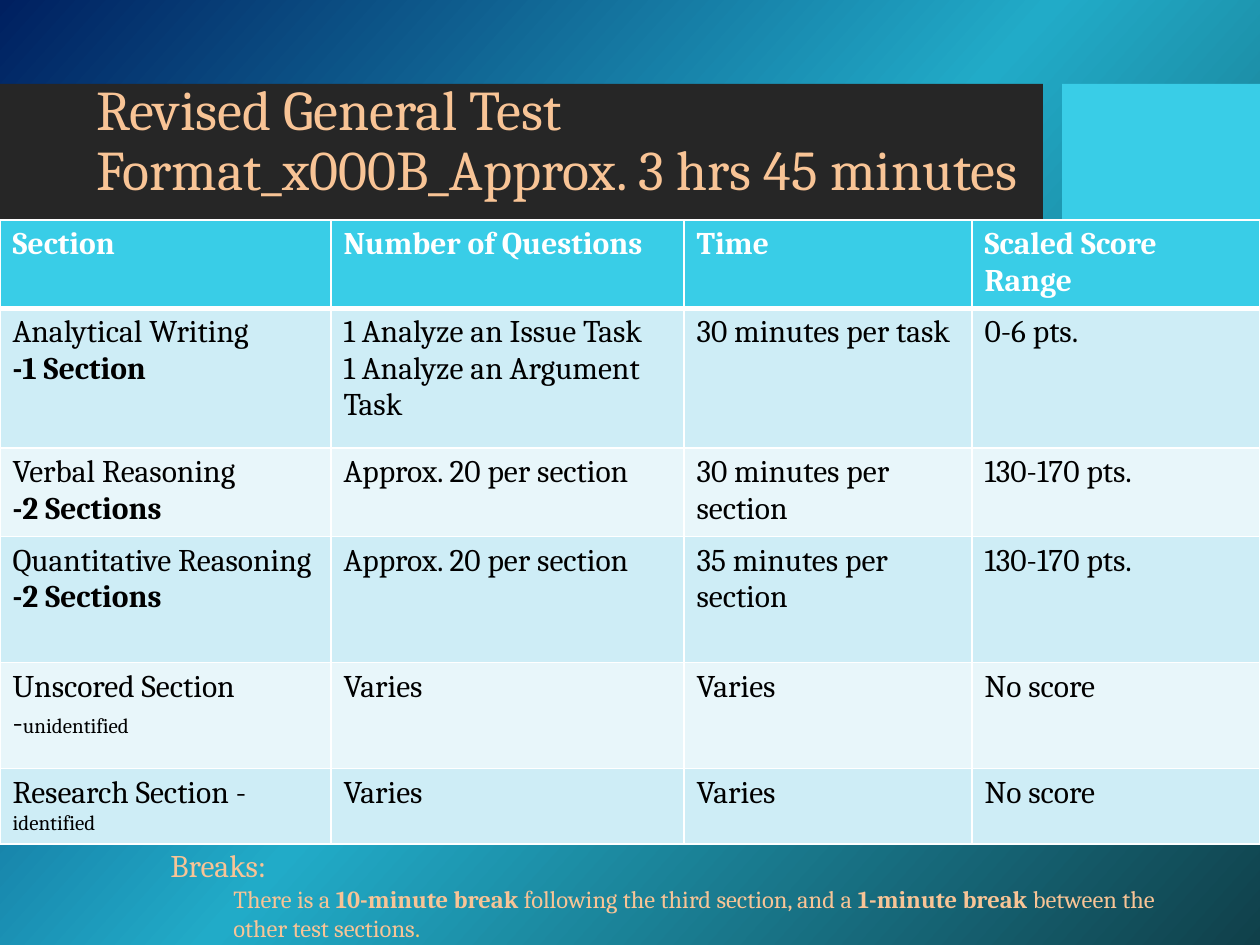
from copy import deepcopy

from lxml import etree
from pptx import Presentation
from pptx.dml.color import RGBColor
from pptx.enum import shapes, text
from pptx.oxml.ns import qn
from pptx.util import Emu, Pt

FONT = "Cambria"
PEACH, CYAN, WHITE, BLACK = "F8C496", "39CDE7", "FFFFFF", "000000"
BAND_FILLS = ["CEEDF6", "E8F6FA"]
GRADIENT = [(0, "002060"), (0.5, "21ABC8"), (1, "10404A")]
BANNER = [(0, 84, 1043, 189, "262626"), (1062, 84, 198, 189, CYAN)]
TITLE = "Revised General Test Format\vApprox. 3 hrs 45 minutes"

COLUMNS = [331, 353, 288, 288]
ROWS = [88, 140, 88, 126, 106, 75]
REGULAR, BOLD, SMALL = (18, False), (18, True), (12, False)
HEADER = ["Section", "Number of Questions", "Time", "Scaled Score Range"]
BODY = [
    [[[("Analytical Writing", REGULAR)], [("-1 Section", BOLD)]],
     "1 Analyze an Issue Task\n1 Analyze an Argument Task",
     "30 minutes per task", "0-6 pts."],
    [[[("Verbal Reasoning", REGULAR)], [("-2 Sections", BOLD)]],
     "Approx. 20 per section", "30 minutes per section", "130-170 pts."],
    [[[("Quantitative Reasoning", REGULAR)], [("-2 Sections", BOLD)]],
     "Approx. 20 per section", "35 minutes per section", "130-170 pts."],
    [[[("Unscored Section -", REGULAR), ("unidentified", SMALL)]],
     "Varies", "Varies", "No score"],
    [[[("Research Section - ", REGULAR), ("identified", SMALL)]],
     "Varies", "Varies", "No score"],
]
BREAKS = [
    [("Breaks:", REGULAR)],
    [("There is a ", (14, False)), ("10-minute break", (14, True)),
     (" following the third section, and a ", (14, False)),
     ("1-minute break", (14, True)),
     (" between the other test sections", (14, False)),
     (".", (14, False), "FFCC66")],
]


def px(value):
    return Emu(round(value * 914400 / 126))


def color(value):
    return RGBColor.from_string(value)


def write(frame, paragraphs, ink):
    for index, spans in enumerate(paragraphs):
        para = frame.add_paragraph() if index else frame.paragraphs[0]
        para.font.name = FONT
        for words, (size, bold), *special in spans:
            span = para.add_run()
            span.text = words
            span.font.name = FONT
            span.font.size = Pt(size)
            span.font.bold = bold
            span.font.color.rgb = color(special[0] if special else ink)


def add_text(page, left, top, width, height, paragraphs, ink):
    box = page.shapes.add_textbox(px(left), px(top), px(width), px(height))
    box.text_frame.word_wrap = True
    write(box.text_frame, paragraphs, ink)
    return box.text_frame


def add_borders(cell, bottom):
    properties = cell._tc.get_or_add_tcPr()
    for side, width in zip("LRTB", (1, 1, 1, bottom)):
        line = etree.SubElement(properties, qn(f"a:ln{side}"), w=str(Pt(width)))
        fill = etree.SubElement(line, qn("a:solidFill"))
        etree.SubElement(fill, qn("a:srgbClr"), val=WHITE)


def fill_cell(cell, content, fill, ink, style, bottom):
    if isinstance(content, str):
        content = [[(words, style)] for words in content.split("\n")]
    write(cell.text_frame, content, ink)
    add_borders(cell, bottom)
    cell.fill.solid()
    cell.fill.fore_color.rgb = color(fill)


def paint_background(page):
    fill = page.background.fill
    fill.gradient()
    fill.gradient_angle = 318
    stops = page._element.find(".//" + qn("a:gsLst"))
    stops.append(deepcopy(stops[-1]))
    for stop, (position, value) in zip(fill.gradient_stops, GRADIENT):
        stop.position = position
        stop.color.rgb = color(value)


def add_schedule(page):
    table = page.shapes.add_table(
        len(ROWS), len(COLUMNS), px(0), px(220), px(sum(COLUMNS)), px(sum(ROWS))
    ).table
    for column, width in zip(table.columns, COLUMNS):
        column.width = px(width)
    for row, height in zip(table.rows, ROWS):
        row.height = px(height)
    for index, contents in enumerate([HEADER] + BODY):
        if index:
            look = (BAND_FILLS[(index - 1) % 2], BLACK, REGULAR, 1)
        else:
            look = (CYAN, WHITE, BOLD, 3)
        for cell, content in zip(table.rows[index].cells, contents):
            fill_cell(cell, content, *look)


def main():
    deck = Presentation()
    deck.slide_width, deck.slide_height = px(1260), px(945)
    page = deck.slides.add_slide(deck.slide_layouts[6])
    paint_background(page)

    for left, top, width, height, fill in BANNER:
        block = page.shapes.add_shape(
            shapes.MSO_SHAPE.RECTANGLE, px(left), px(top), px(width), px(height))
        block.shadow.inherit = False
        block.fill.solid()
        block.fill.fore_color.rgb = color(fill)
        block.line.fill.background()

    title = add_text(page, 84, 63, 975, 159, [[(TITLE, (32, False))]], PEACH)
    title.vertical_anchor = text.MSO_ANCHOR.MIDDLE
    title.paragraphs[0].line_spacing = 0.9

    add_schedule(page)

    breaks = add_text(page, 158, 840, 1050, 111, BREAKS, PEACH)
    detail = breaks.paragraphs[1]
    detail.level = 1
    detail._p.get_or_add_pPr().set("marL", str(px(63)))

    deck.save("out.pptx")


if __name__ == "__main__":
    main()
